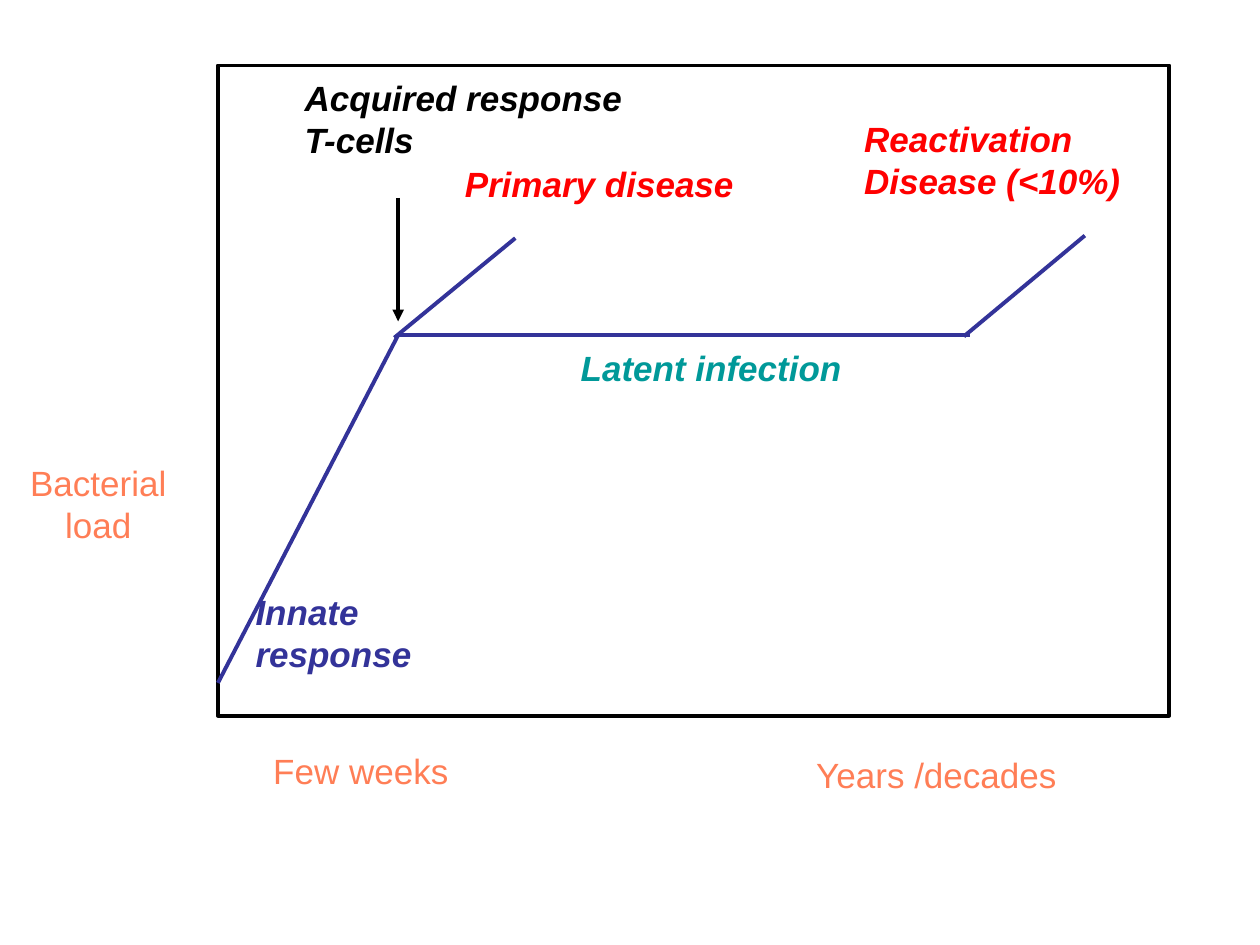
from pptx import Presentation
from pptx.dml.color import RGBColor as RGB
from pptx.enum.shapes import MSO_CONNECTOR as Link, MSO_SHAPE as Form
from pptx.enum.text import MSO_AUTO_SIZE as Fit, PP_ALIGN as Align
from pptx.oxml.ns import qn
from pptx.util import Inches, Pt
from lxml.etree import SubElement

BLACK = RGB(0x00, 0x00, 0x00)
WHITE = RGB(0xFF, 0xFF, 0xFF)
CORAL = RGB(0xFF, 0x7E, 0x56)
NAVY = RGB(0x33, 0x33, 0x99)
RED = RGB(0xFF, 0x00, 0x00)
TEAL = RGB(0x00, 0x99, 0x99)


class Chart:
    """Draws the infection course on one slide in a shared style."""

    font = "Arial"
    size = Pt(20)
    width = Pt(2.25)

    def __init__(self, slide):
        self.shapes = slide.shapes

    def frame(self, *box):
        rect = self.shapes.add_shape(Form.RECTANGLE, *map(Inches, box))
        rect.shadow.inherit = False
        rect.fill.solid()
        rect.fill.fore_color.rgb = WHITE
        rect.line.color.rgb = BLACK
        rect.line.width = self.width

    def line(self, start, end, color=NAVY, arrow=False):
        link = self.shapes.add_connector(
            Link.STRAIGHT, *map(Inches, (*start, *end)))
        link.line.color.rgb = color
        link.line.width = self.width
        props = link._element.spPr
        if arrow:
            SubElement(props.find(qn("a:ln")), qn("a:tailEnd"), type="triangle")
        SubElement(props, qn("a:effectLst"))

    def label(self, text, box, color, strong=True, align=Align.LEFT, fill=None):
        item = self.shapes.add_textbox(*map(Inches, box))
        if fill is not None:
            item.fill.solid()
            item.fill.fore_color.rgb = fill
        body = item.text_frame
        body.word_wrap = False
        body.auto_size = Fit.SHAPE_TO_FIT_TEXT
        body.text = text
        for para in body.paragraphs:
            para.alignment = align
            for run in para.runs:
                font = run.font
                font.name, font.size = self.font, self.size
                font.bold = font.italic = strong
                font.color.rgb = color


def main():
    deck = Presentation()
    deck.slide_width, deck.slide_height = Inches(10), Inches(7.5)
    chart = Chart(deck.slides.add_slide(deck.slide_layouts[6]))

    chart.label("Bacterial\nload", (0.14, 3.61, 1.28, 0.77), CORAL,
                strong=False, align=Align.CENTER)
    chart.label("Few weeks", (2.07, 5.9, 1.59, 0.43), CORAL, strong=False)
    chart.label("Years /decades", (6.38, 5.93, 2.13, 0.44), CORAL, strong=False)

    chart.frame(1.73, 0.52, 7.55, 5.16)
    chart.line((1.73, 5.42), (3.16, 2.66))
    chart.line((3.16, 2.66), (7.7, 2.66))
    chart.label("Acquired response\nT-cells", (2.32, 0.56, 3.13, 0.95), BLACK)
    chart.line((3.16, 1.57), (3.16, 2.55), BLACK, arrow=True)
    chart.line((3.13, 2.68), (4.09, 1.89))
    chart.label("Primary disease", (3.59, 1.24, 2.68, 0.54), RED, fill=WHITE)
    chart.line((7.65, 2.67), (8.61, 1.87))
    chart.label("Reactivation\nDisease (<10%)", (6.76, 0.88, 2.57, 0.95), RED)
    chart.label("Innate\nresponse", (1.93, 4.64, 1.66, 0.96), NAVY)
    chart.label("Latent infection", (4.51, 2.7, 2.61, 0.54), TEAL)

    deck.save("out.pptx")


if __name__ == "__main__":
    main()
